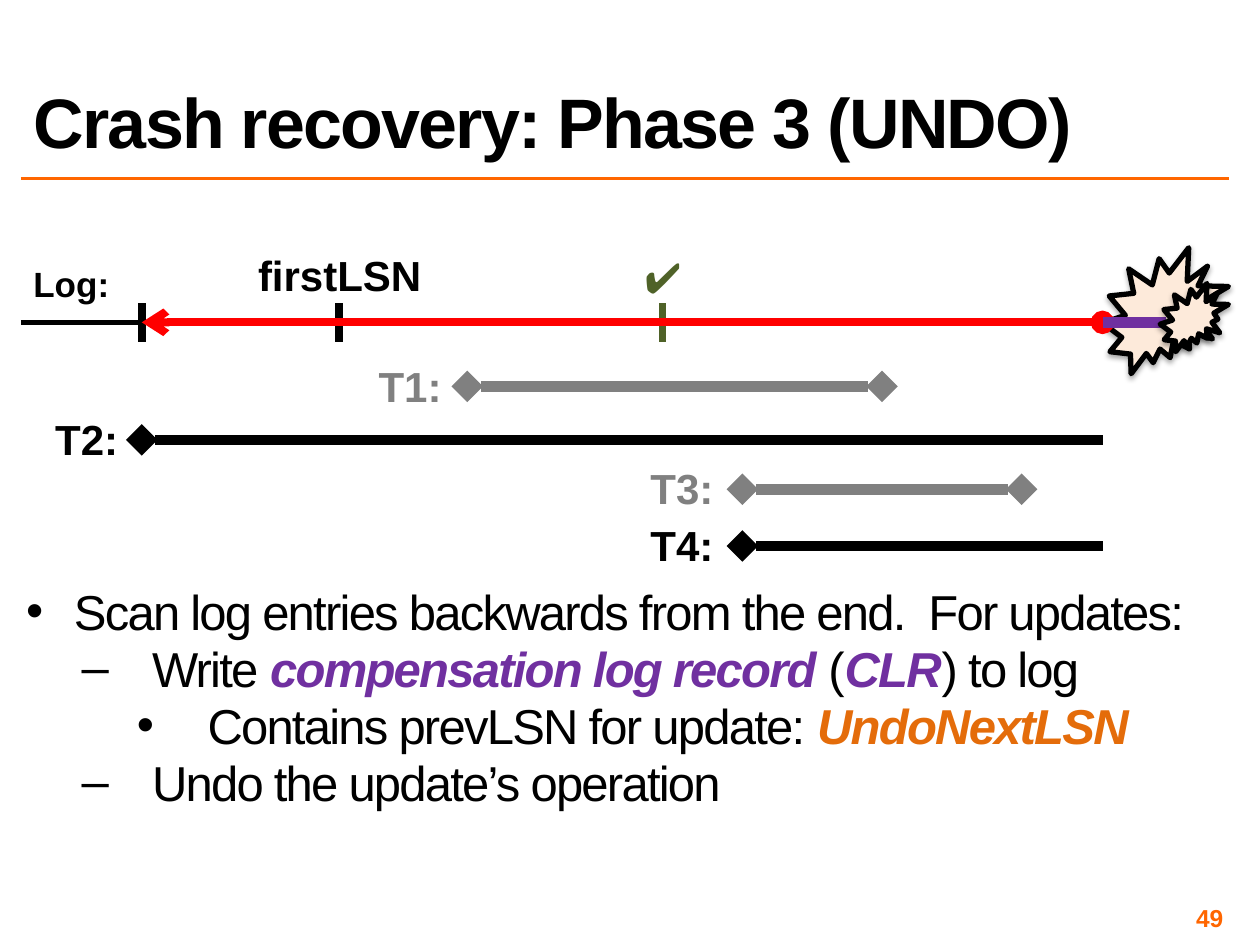
from lxml.etree import SubElement
from pptx import Presentation
from pptx.dml.color import RGBColor
from pptx.enum.shapes import MSO_CONNECTOR, MSO_SHAPE
from pptx.enum.text import MSO_ANCHOR, MSO_AUTO_SIZE, PP_ALIGN
from pptx.oxml.ns import qn
from pptx.util import Inches, Pt

COLORS = {
    "black": "000000", "gray": "808080", "red": "FF0000", "purple": "7030A0",
    "green": "4F6228", "orange": "FF6600", "amber": "E46C0A", "peach": "FDEADA",
}
COLUMNS, ROWS = 120, 90
WIDTH, HEIGHT = Inches(10), Inches(7.5)
LEFT, RIGHT, CRASH = 2, 117, 105
LOG_ROW = 30.7
TICK_TOP, TICK_BOTTOM = 28.9, 32.6
INSET = Inches(0.04)

TRANSACTIONS = [
    ("T1:", 44.5, 84, 36.8, 34.8, "gray", "diamond"),
    ("T2:", 13.5, CRASH, 41.9, 4, "black", None),
    ("T3:", 70.7, 97.3, 46.6, 60.7, "gray", "diamond"),
    ("T4:", 70.7, CRASH, 52, 60.7, "black", None),
]
BULLETS = [
    (0, "•", 0.38, 0.38, [("Scan log entries backwards from the end.  For updates:", None)]),
    (1, "–", 1, 0.56, [("Write ", None), ("compensation log record ", "purple"),
                       ("(", None), ("CLR", "purple"), (") to log", None)]),
    (2, "•", 1.44, 0.56, [("Contains prevLSN for update: ", None), ("UndoNextLSN", "amber")]),
    (1, "–", 1, 0.56, [("Undo the update’s operation", None)]),
]


def across(columns):
    """Return the length of a number of grid columns."""
    return round(WIDTH * columns / COLUMNS)


def down(rows):
    """Return the length of a number of grid rows."""
    return round(HEIGHT * rows / ROWS)


def color(name):
    """Return a palette colour."""
    return RGBColor.from_string(COLORS[name])


def place(shape, left, top, width, height):
    """Move and size a shape on the grid."""
    shape.left, shape.top = across(left), down(top)
    shape.width, shape.height = across(width), down(height)


def style(paragraph, size, name, bold=True):
    """Set the font of a paragraph."""
    font = paragraph.font
    font.name, font.size, font.bold = "Arial", Pt(size), bold
    font.color.rgb = color(name)


def tighten(paragraph):
    """Set the condensed letters and lines of a placeholder paragraph."""
    paragraph.line_spacing = 0.8
    paragraph.font._element.set("spc", "-100")


def set_insets(frame):
    """Give a text frame narrow margins."""
    frame.margin_left = frame.margin_right = INSET
    frame.margin_top = frame.margin_bottom = INSET


def add_line(slide, start, end, name, width, head=None, tail=None):
    """Draw a straight line between two grid points."""
    line = slide.shapes.add_connector(
        MSO_CONNECTOR.STRAIGHT, across(start[0]), down(start[1]), across(end[0]), down(end[1]))
    line.line.color.rgb = color(name)
    line.line.width = Pt(width)
    outline = line.line._get_or_add_ln()
    for tag, kind in (("a:headEnd", head), ("a:tailEnd", tail)):
        if kind:
            SubElement(outline, qn(tag), type=kind)
    SubElement(line._element.spPr, qn("a:effectLst"))


def add_label(slide, text, left, top, width, height=6, size=24, name="black",
              align=PP_ALIGN.CENTER):
    """Add a bold one-line label."""
    box = slide.shapes.add_textbox(across(left), down(top), across(width), down(height))
    frame = box.text_frame
    frame.word_wrap = False
    frame.auto_size = MSO_AUTO_SIZE.SHAPE_TO_FIT_TEXT
    paragraph = frame.paragraphs[0]
    paragraph.text, paragraph.alignment = text, align
    style(paragraph, size, name)
    return frame


def add_burst(slide, left, top, size):
    """Add a crash burst with a soft shadow."""
    burst = slide.shapes.add_shape(
        MSO_SHAPE.EXPLOSION2, across(left), down(top), across(size), down(size))
    burst.fill.solid()
    burst.fill.fore_color.rgb = color("peach")
    burst.line.color.rgb = color("black")
    burst.line.width = Pt(3)
    burst.shadow.inherit = False
    effects = burst._element.spPr.find(qn("a:effectLst"))
    shadow = SubElement(effects, qn("a:outerShdw"), blurRad=str(Pt(3.1)), dist=str(Pt(1.8)),
                        dir="5400000", rotWithShape="0")
    shade = SubElement(shadow, qn("a:srgbClr"), val=COLORS["black"])
    SubElement(shade, qn("a:alpha"), val="35000")


def add_title(slide):
    """Fill the title placeholder and draw the rule below it."""
    title = slide.shapes.title
    place(title, LEFT, 2, RIGHT - LEFT, 14)
    frame = title.text_frame
    frame.text = "Crash recovery: Phase 3 (UNDO)"
    frame.vertical_anchor = MSO_ANCHOR.BOTTOM
    frame.auto_size = MSO_AUTO_SIZE.NONE
    paragraph = frame.paragraphs[0]
    paragraph.alignment = PP_ALIGN.LEFT
    style(paragraph, 40, "black")
    tighten(paragraph)
    add_line(slide, (LEFT, 17), (RIGHT, 17), "orange", 2)


def add_bullets(slide):
    """Fill the body placeholder with the undo steps."""
    body = slide.placeholders[1]
    place(body, LEFT, 56, RIGHT - LEFT, 29)
    frame = body.text_frame
    frame.auto_size = MSO_AUTO_SIZE.NONE
    set_insets(frame)
    for index, (level, mark, margin, hanging, parts) in enumerate(BULLETS):
        paragraph = frame.add_paragraph() if index else frame.paragraphs[0]
        paragraph.level = level
        paragraph.space_before = Pt(5.6)
        properties = paragraph._p.get_or_add_pPr()
        properties.set("marL", str(Inches(margin)))
        properties.set("indent", str(-Inches(hanging)))
        SubElement(properties, qn("a:buFont"), typeface="Arial")
        SubElement(properties, qn("a:buChar"), char=mark)
        style(paragraph, 28, "black", bold=False)
        tighten(paragraph)
        for text, accent in parts:
            run = paragraph.add_run()
            run.text = text
            if accent:
                run.font.bold = run.font.italic = True
                run.font.color.rgb = color(accent)


def add_log(slide):
    """Draw the log with its marks, the crash and the backward scan."""
    add_label(slide, "Log:", LEFT, 24.4, 9.7, 5.3, 20, align=PP_ALIGN.LEFT)
    add_label(slide, "firstLSN", 23.3, 23.2, 18.1)
    add_label(slide, "✔", 59.9, 23.4, 6.5, name="green")
    add_line(slide, (LEFT, LOG_ROW), (CRASH, LOG_ROW), "black", 3)
    add_burst(slide, CRASH, 23.6, 12)
    for column, name in ((13.5, "black"), (32.3, "black"), (63.1, "green")):
        add_line(slide, (column, TICK_TOP), (column, TICK_BOTTOM), name, 4.5)
    add_line(slide, (CRASH, LOG_ROW), (13.5, LOG_ROW), "red", 4.5, "oval", "arrow")
    add_line(slide, (CRASH, LOG_ROW), (111, LOG_ROW), "purple", 6)
    add_burst(slide, 110.5, 27, 6.5)


def add_transactions(slide):
    """Draw the span of each transaction with its label."""
    for text, start, end, row, label, name, tail in TRANSACTIONS:
        add_line(slide, (start, row), (end, row), name, 6, "diamond", tail)
        add_label(slide, text, label, row - 3.1, 8.5, name=name)


def add_number(slide):
    """Add the slide number at the lower right."""
    frame = add_label(slide, "49", 89, 86, 28, 2.8, 14, "orange", PP_ALIGN.RIGHT)
    frame.word_wrap = True
    frame.auto_size = MSO_AUTO_SIZE.NONE
    frame.vertical_anchor = MSO_ANCHOR.MIDDLE
    set_insets(frame)


def main():
    """Build the slide and save it."""
    presentation = Presentation()
    presentation.slide_width, presentation.slide_height = WIDTH, HEIGHT
    slide = presentation.slides.add_slide(presentation.slide_layouts[1])
    add_title(slide)
    add_bullets(slide)
    add_log(slide)
    add_transactions(slide)
    add_number(slide)
    presentation.save("out.pptx")


if __name__ == "__main__":
    main()
